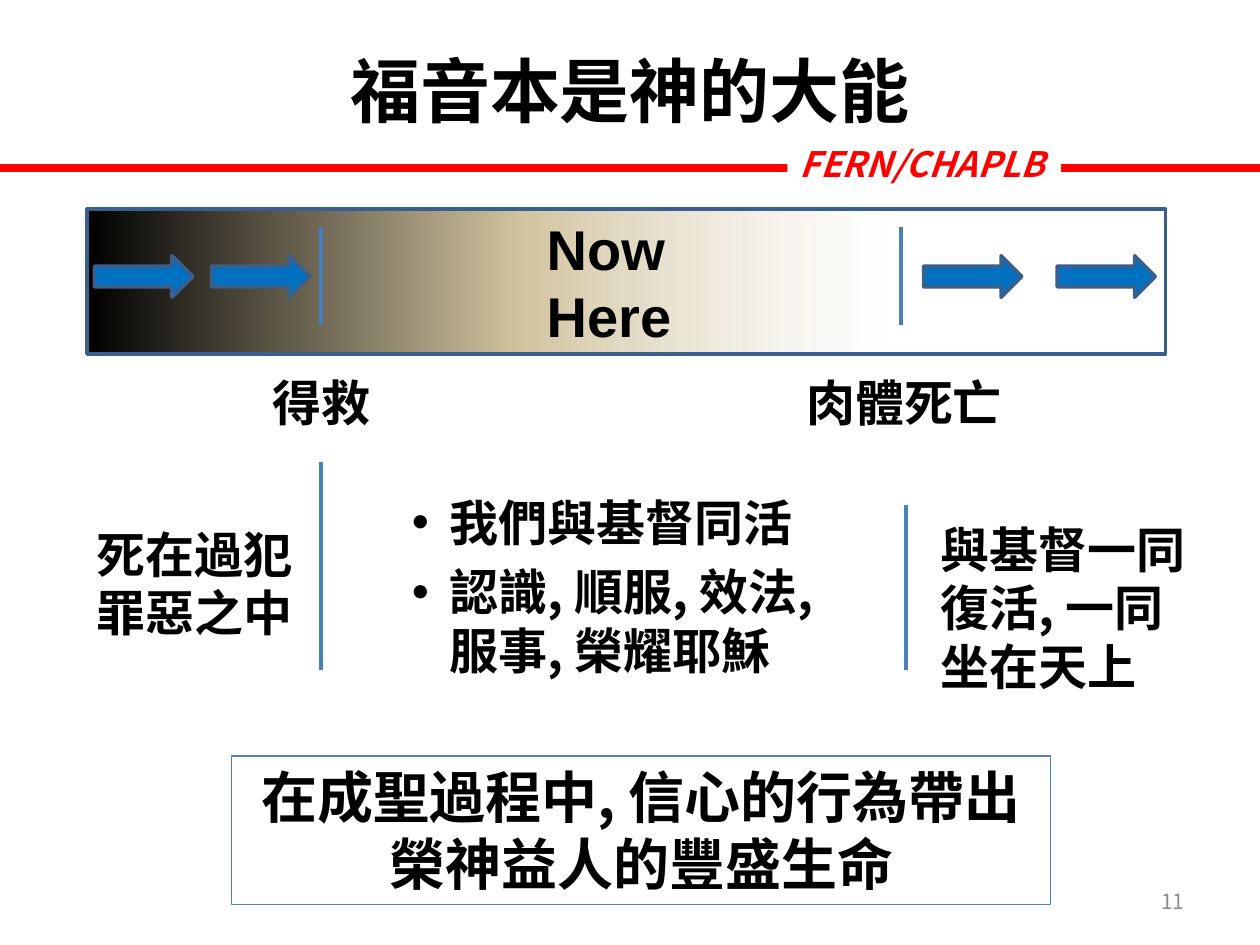
from lxml import etree
from pptx import Presentation
from pptx.dml.color import RGBColor
from pptx.enum.shapes import MSO_CONNECTOR as Connector, MSO_SHAPE as Preset
from pptx.enum.text import MSO_ANCHOR as Anchor, PP_ALIGN as Align
from pptx.oxml import parse_xml
from pptx.oxml.ns import nsdecls, qn
from pptx.util import Inches, Pt

COLORS = {
    "text": "000000",
    "red": "FF0000",
    "white": "FFFFFF",
    "arrow": "0070C0",
    "outline": "3A5F8C",
    "divider": "4B7EBC",
    "frame": "4F81BD",
    "sand": "D1C39F",
    "number": "8C8C8C",
}
CJK = "Noto Sans CJK TC"


def color(name):
    return RGBColor.from_string(COLORS[name])


class SlideBuilder:
    def __init__(self, page, font=CJK):
        self.page = page
        self.font = font

    def line(self, start, end, tint, width):
        points = [Inches(value) for value in (*start, *end)]
        connector = self.page.shapes.add_connector(Connector.STRAIGHT, *points)
        connector.line.color.rgb = color(tint)
        connector.line.width = Pt(width)
        etree.SubElement(connector._element.spPr, qn("a:effectLst"))

    def shape(self, preset, place, fill=None, outline=None, width=2):
        shape = self.page.shapes.add_shape(preset, *map(Inches, place))
        shape.shadow.inherit = False
        if fill:
            shape.fill.solid()
            shape.fill.fore_color.rgb = color(fill)
        else:
            shape.fill.background()
        if outline:
            shape.line.color.rgb = color(outline)
            shape.line.width = Pt(width)
        else:
            shape.line.fill.background()
        return shape

    def gradient_bar(self, place, stops):
        bar = self.shape(Preset.RECTANGLE, place, "white", "outline")
        stop_xml = "".join(
            f'<a:gs pos="{position * 1000}"><a:srgbClr val="{COLORS[tint]}">'
            f'<a:alpha val="{opacity * 1000}"/></a:srgbClr></a:gs>'
            for position, tint, opacity in stops
        )
        gradient = parse_xml(
            f'<a:gradFill {nsdecls("a")} rotWithShape="1"><a:gsLst>{stop_xml}</a:gsLst>'
            '<a:lin ang="0" scaled="0"/></a:gradFill>'
        )
        properties = bar._element.spPr
        properties.replace(properties.find(qn("a:solidFill")), gradient)

    def box(self, place):
        return self.page.shapes.add_textbox(*map(Inches, place))

    def span(self, para, text, size, tint="text", font=None, bold=True, italic=False):
        span = para.add_run()
        span.text = text
        span.font.size = Pt(size)
        span.font.bold = bold
        span.font.italic = italic
        span.font.color.rgb = color(tint)
        span.font.name = font or self.font
        east_asian = etree.SubElement(span._r.get_or_add_rPr(), qn("a:ea"))
        east_asian.set("typeface", font or self.font)

    def put_text(self, box, text, size, align=Align.LEFT, anchor=Anchor.TOP, **style):
        frame = box.text_frame
        frame.word_wrap = True
        frame.vertical_anchor = anchor
        para = frame.paragraphs[0]
        para.alignment = align
        for index, part in enumerate(text.split("\n")):
            if index:
                para.add_line_break()
            self.span(para, part, size, **style)

    def bullets(self, place, items, size):
        frame = self.box(place).text_frame
        frame.word_wrap = True
        for index, item in enumerate(items):
            para = frame.add_paragraph() if index else frame.paragraphs[0]
            if index:
                para.space_before = Pt(6)
            properties = para._p.get_or_add_pPr()
            properties.set("marL", str(Inches(0.3)))
            properties.set("indent", str(-Inches(0.3)))
            font = etree.SubElement(properties, qn("a:buFont"))
            font.set("typeface", "Arial")
            etree.SubElement(properties, qn("a:buChar")).set("char", "•")
            self.span(para, item, size)


def main():
    deck = Presentation()
    deck.slide_width = Inches(10)
    deck.slide_height = Inches(7.5)
    page = deck.slides.add_slide(deck.slide_layouts[6])
    builder = SlideBuilder(page)

    builder.line((0, 1.33), (10, 1.33), "red", 4.5)

    builder.gradient_bar(
        (0.69, 1.66, 8.56, 1.15),
        [(0, "text", 100), (40, "sand", 100), (74, "white", 54)],
    )
    builder.put_text(builder.box((4.24, 1.65, 1.65, 1.18)), "Now \nHere", 32, font="Arial")
    for left in (0.75, 1.68, 7.33, 8.39):
        builder.shape(Preset.RIGHT_ARROW, (left, 2.03, 0.78, 0.33), "arrow", "outline")

    for x, top, bottom in (
        (2.55, 1.8, 2.58),
        (7.15, 1.8, 2.58),
        (2.55, 3.67, 5.32),
        (7.19, 4.01, 5.32),
    ):
        builder.line((x, top), (x, bottom), "divider", 2.25)

    for place, text, align in (
        ((1.92, 2.91, 1.26, 0.57), "得救", Align.CENTER),
        ((6.17, 2.91, 2.01, 0.57), "肉體死亡", Align.CENTER),
        ((0.67, 4.11, 1.86, 1.04), "死在過犯罪惡之中", Align.LEFT),
        ((7.37, 4.07, 2.3, 1.51), "與基督一同復活, 一同坐在天上", Align.LEFT),
    ):
        builder.put_text(builder.box(place), text, 28, align)
    builder.bullets(
        (3.17, 3.86, 3.75, 1.6),
        ["我們與基督同活", "認識, 順服, 效法, 服事, 榮耀耶穌"],
        28,
    )

    summary = builder.shape(
        Preset.RECTANGLE, (1.84, 6, 6.5, 1.18), outline="frame", width=0.75
    )
    builder.put_text(summary, "在成聖過程中, 信心的行為帶出榮神益人的豐盛生命", 32, Align.CENTER)

    builder.put_text(builder.box((0, 0.33, 10, 0.77)), "福音本是神的大能", 40, Align.CENTER)
    label = builder.shape(Preset.RECTANGLE, (6.25, 1.08, 2.17, 0.44), "white")
    builder.put_text(label, "FERN/CHAPLB", 20, tint="red", italic=True)
    builder.put_text(
        builder.box((7.17, 6.95, 2.33, 0.4)),
        "11",
        12,
        Align.RIGHT,
        Anchor.MIDDLE,
        tint="number",
        bold=False,
    )

    deck.save("out.pptx")


if __name__ == "__main__":
    main()
